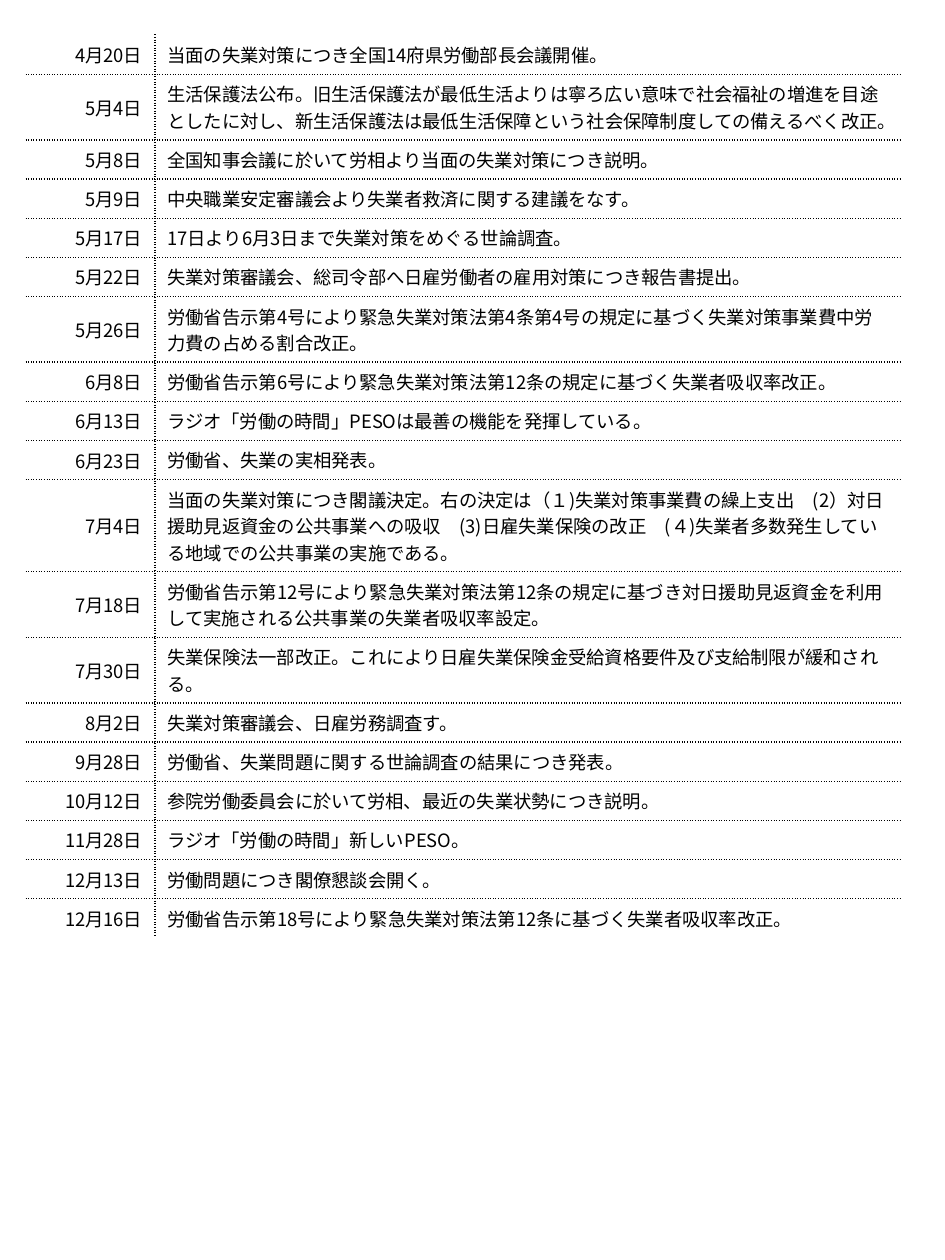
from dataclasses import dataclass

from lxml import etree
from pptx import Presentation
from pptx import util as u
from pptx.dml.color import RGBColor
from pptx.enum import text
from pptx.oxml import ns


@dataclass(frozen=True)
class Theme:
    font: str = "Noto Sans CJK JP"
    size: float = 10.5
    ink: str = "000000"
    paper: str = "FFFFFF"
    rule_width: float = 1


theme = Theme()

events = [
    ("4月20日", "当面の失業対策につき全国14府県労働部長会議開催。"),
    ("5月4日", "生活保護法公布。旧生活保護法が最低生活よりは寧ろ広い意味で社会福祉の増進を目途"
              "としたに対し、新生活保護法は最低生活保障という社会保障制度しての備えるべく改正。"),
    ("5月8日", "全国知事会議に於いて労相より当面の失業対策につき説明。"),
    ("5月9日", "中央職業安定審議会より失業者救済に関する建議をなす。"),
    ("5月17日", "17日より6月3日まで失業対策をめぐる世論調査。"),
    ("5月22日", "失業対策審議会、総司令部へ日雇労働者の雇用対策につき報告書提出。"),
    ("5月26日", "労働省告示第4号により緊急失業対策法第4条第4号の規定に基づく失業対策事業費"
               "中労力費の占める割合改正。"),
    ("6月8日", "労働省告示第6号により緊急失業対策法第12条の規定に基づく失業者吸収率改正。"),
    ("6月13日", "ラジオ「労働の時間」PESOは最善の機能を発揮している。"),
    ("6月23日", "労働省、失業の実相発表。"),
    ("7月4日", "当面の失業対策につき閣議決定。右の決定は（１)失業対策事業費の繰上支出　(2）"
              "対日援助見返資金の公共事業への吸収　(3)日雇失業保険の改正　(４)失業者多数発"
              "生している地域での公共事業の実施である。"),
    ("7月18日", "労働省告示第12号により緊急失業対策法第12条の規定に基づき対日援助見返資金を利"
               "用して実施される公共事業の失業者吸収率設定。"),
    ("7月30日", "失業保険法一部改正。これにより日雇失業保険金受給資格要件及び支給制限が緩和される。"),
    ("8月2日", "失業対策審議会、日雇労務調査す。"),
    ("9月28日", "労働省、失業問題に関する世論調査の結果につき発表。"),
    ("10月12日", "参院労働委員会に於いて労相、最近の失業状勢につき説明。"),
    ("11月28日", "ラジオ「労働の時間」新しいPESO。"),
    ("12月13日", "労働問題につき閣僚懇談会開く。"),
    ("12月16日", "労働省告示第18号により緊急失業対策法第12条に基づく失業者吸収率改正。"),
]


def add_border(cell, side, outer):
    """Solid paper-coloured line on the outer edge, dotted ink line inside."""
    line = etree.SubElement(cell._tc.get_or_add_tcPr(), ns.qn(f"a:ln{side}"),
                            w=str(u.Pt(theme.rule_width)))
    fill = etree.SubElement(line, ns.qn("a:solidFill"))
    etree.SubElement(fill, ns.qn("a:srgbClr"), val=theme.paper if outer else theme.ink)
    etree.SubElement(line, ns.qn("a:prstDash"), val="solid" if outer else "sysDot")


def write(cell, words, align):
    paragraph = cell.text_frame.paragraphs[0]
    paragraph.alignment = align
    run = paragraph.add_run()
    run.text = words
    run.font.name = theme.font
    run.font.size = u.Pt(theme.size)
    run.font.color.rgb = RGBColor.from_string(theme.ink)
    etree.SubElement(run.font._element, ns.qn("a:ea"), typeface=theme.font)


# Slide
prs = Presentation()
prs.slide_width, prs.slide_height = u.Cm(19.05), u.Cm(25.4)
slide = prs.slides.add_slide(prs.slide_layouts[6])

# Chronology table: date and event
widths = [2.59, 15.01]
row_height = 0.61
chronology = slide.shapes.add_table(
    len(events), len(widths), u.Cm(0.53), u.Cm(0.71),
    u.Cm(sum(widths)), u.Cm(row_height * len(events))).table
chronology.first_row = False
chronology.horz_banding = False
for column, width in zip(chronology.columns, widths):
    column.width = u.Cm(width)

# Rows, with dotted rules between the cells only
last = len(events) - 1
for index, (date, event) in enumerate(events):
    chronology.rows[index].height = u.Cm(row_height)
    date_cell, event_cell = chronology.rows[index].cells
    write(date_cell, date, text.PP_ALIGN.RIGHT)
    write(event_cell, event, text.PP_ALIGN.LEFT)
    date_cell.vertical_anchor = text.MSO_ANCHOR.MIDDLE
    for cell, outer_side in ((date_cell, "L"), (event_cell, "R")):
        add_border(cell, "L", outer_side == "L")
        add_border(cell, "R", outer_side == "R")
        add_border(cell, "T", index == 0)
        add_border(cell, "B", index == last)
        cell.fill.background()

prs.save("out.pptx")
